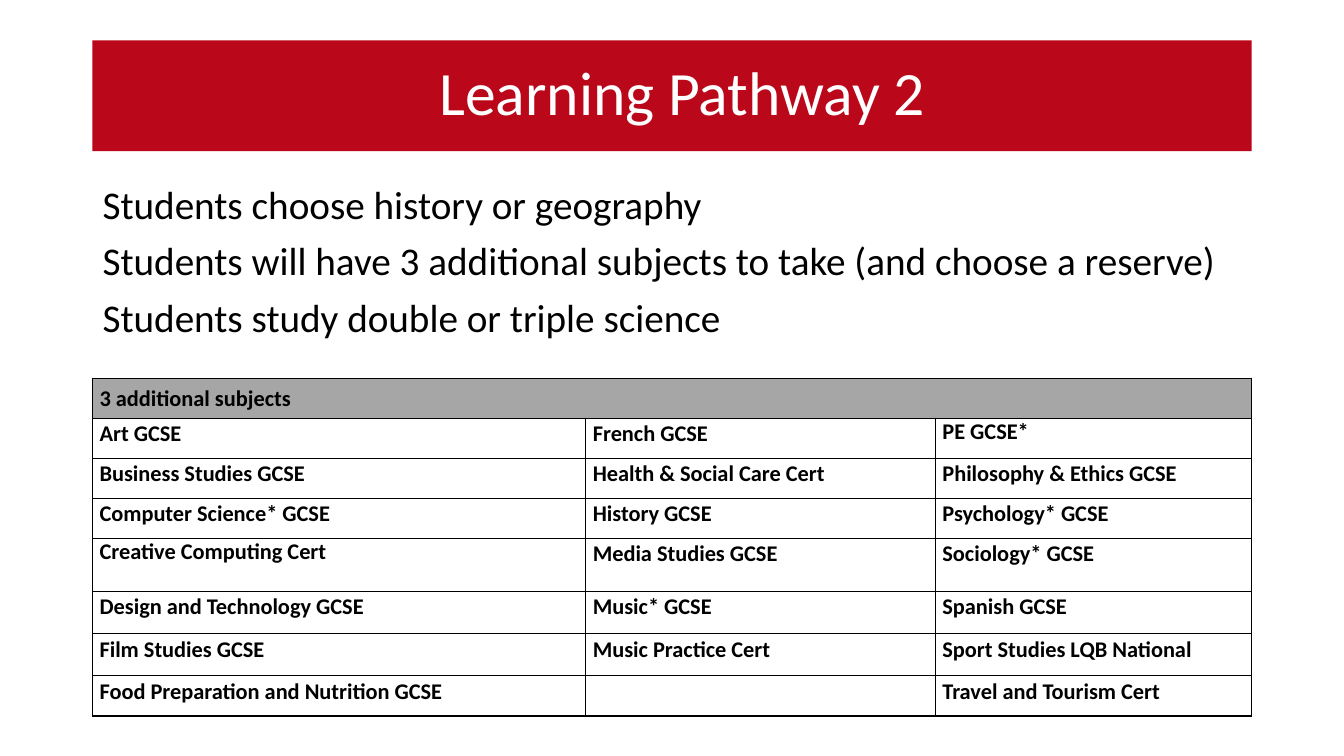
from lxml.etree import SubElement
from pptx import Presentation
from pptx.dml.color import RGBColor
from pptx.enum.text import MSO_ANCHOR as Anchor, MSO_AUTO_SIZE as AutoSize, PP_ALIGN as Align
from pptx.oxml.ns import qn
from pptx.util import Cm, Pt

COLORS = {"banner": "BA0719", "header": "A6A6A6", "white": "FFFFFF", "black": "000000"}
FONT = "Calibri"
LEFT, WIDTH = Cm(2.33), Cm(29.21)


def add_text(paragraph, text, size, color="black", bold=False):
    run = paragraph.add_run()
    run.text = text
    run.font.name = FONT
    run.font.size = Pt(size)
    run.font.bold = bold
    run.font.color.rgb = RGBColor.from_string(COLORS[color])


def add_borders(cell):
    properties = cell._tc.get_or_add_tcPr()
    for side in ("a:lnL", "a:lnR", "a:lnT", "a:lnB"):
        line = SubElement(properties, qn(side), w=str(Pt(1)))
        fill = SubElement(line, qn("a:solidFill"))
        SubElement(fill, qn("a:srgbClr"), val=COLORS["black"])


prs = Presentation()
prs.slide_width, prs.slide_height = Cm(33.87), Cm(19.05)
slide = prs.slides.add_slide(prs.slide_layouts[1])

# Title banner
title = slide.shapes.title
title.left, title.top, title.width, title.height = LEFT, Cm(1.02), WIDTH, Cm(2.79)
title.fill.solid()
title.fill.fore_color.rgb = RGBColor.from_string(COLORS["banner"])
heading = title.text_frame
heading.auto_size = AutoSize.NONE
heading.vertical_anchor = Anchor.MIDDLE
heading.margin_left = Cm(0.79)
heading.paragraphs[0].alignment = Align.CENTER
heading.paragraphs[0].line_spacing = 0.9
add_text(heading.paragraphs[0], "Learning Pathway 2", 44, "white")

# Pathway rules
rules = slide.placeholders[1]
rules.left, rules.top, rules.width, rules.height = LEFT, Cm(4.55), Cm(28.8), Cm(4.98)
rules.text_frame.auto_size = AutoSize.NONE
rules.text_frame.vertical_anchor = Anchor.TOP
for i, rule in enumerate([
    "Students choose history or geography",
    "Students will have 3 additional subjects to take (and choose a reserve)",
    "Students study double or triple science",
]):
    paragraph = rules.text_frame.add_paragraph() if i else rules.text_frame.paragraphs[0]
    properties = paragraph._p.get_or_add_pPr()
    properties.set("marL", "0")
    properties.set("indent", "0")
    SubElement(properties, qn("a:buNone"))
    paragraph.line_spacing = 0.9
    paragraph.space_before = Pt(10 if i else 0)
    add_text(paragraph, rule, 28)

# Subject table
subjects = [
    ("3 additional subjects", "", ""),
    ("Art GCSE", "French GCSE", "PE GCSE*"),
    ("Business Studies GCSE", "Health & Social Care Cert", "Philosophy & Ethics GCSE"),
    ("Computer Science* GCSE", "History GCSE", "Psychology* GCSE"),
    ("Creative Computing Cert", "Media Studies GCSE", "Sociology* GCSE"),
    ("Design and Technology GCSE", "Music* GCSE", "Spanish GCSE"),
    ("Film Studies GCSE", "Music Practice Cert", "Sport Studies LQB National"),
    ("Food Preparation and Nutrition GCSE", "", "Travel and Tourism Cert"),
]
single_spaced = {"PE GCSE*", "Creative Computing Cert"}
column_widths = [12.43, 8.81, 7.97]
row_heights = [1.01, 1.01, 1.01, 1.01, 1.34, 1.06, 1.06, 1.01]

table = slide.shapes.add_table(len(subjects), 3, LEFT, Cm(9.53), WIDTH, Cm(sum(row_heights))).table
table.horz_banding = False
for column, width in zip(table.columns, column_widths):
    column.width = Cm(width)
for row, height in zip(table.rows, row_heights):
    row.height = Cm(height)

for r, names in enumerate(subjects):
    for c, name in enumerate(names):
        cell = table.cell(r, c)
        cell.margin_left = cell.margin_right = Cm(0.18)
        cell.margin_top = cell.margin_bottom = 0
        cell.vertical_anchor = Anchor.TOP if r else Anchor.MIDDLE
        add_borders(cell)
        cell.fill.solid()
        cell.fill.fore_color.rgb = RGBColor.from_string(COLORS["white" if r else "header"])
        paragraph = cell.text_frame.paragraphs[0]
        if name:
            paragraph.line_spacing = 1.0 if name in single_spaced else 1.07
            if r >= 5 and c == 0:
                paragraph.space_after = Pt(8)
            add_text(paragraph, name, 16, bold=True)
        else:
            paragraph.font.size = Pt(16)
table.cell(0, 0).merge(table.cell(0, 2))

prs.save("out.pptx")
